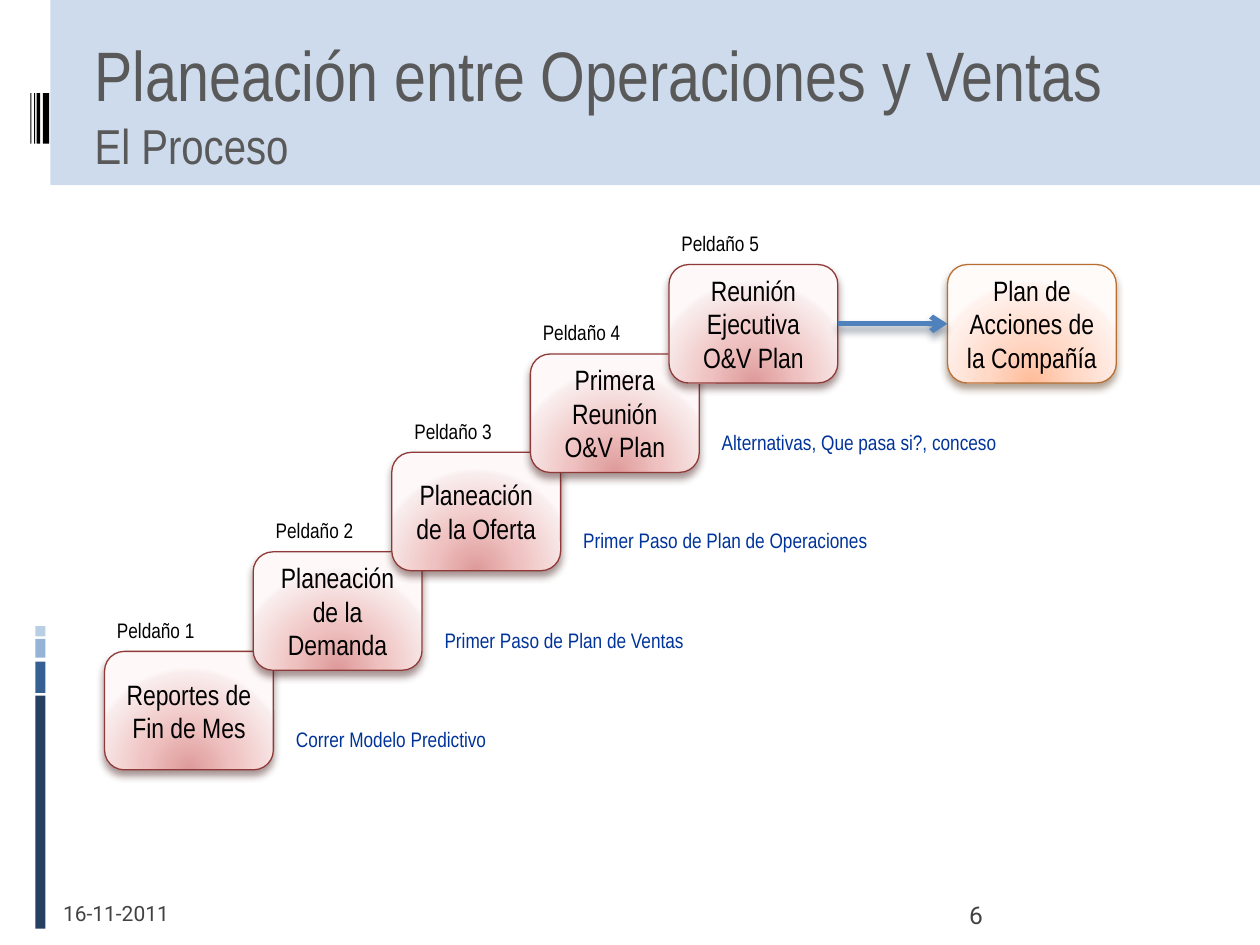
from dataclasses import dataclass
from typing import Optional

from lxml.etree import SubElement
from pptx import Presentation
from pptx.dml.color import RGBColor
from pptx.enum.shapes import MSO_CONNECTOR as Connector, MSO_SHAPE as Shape
from pptx.enum.text import MSO_ANCHOR as Anchor, MSO_AUTO_SIZE as AutoSize, PP_ALIGN as Align
from pptx.oxml import parse_xml
from pptx.oxml.ns import nsdecls, qn
from pptx.util import Inches, Pt

WIDTH, HEIGHT = Inches(10), Inches(7.5)
COLUMN, ROW = WIDTH / 100, HEIGHT / 75
CARD_WIDTH, CARD_HEIGHT = 13.4, 9.4
NARROW, ROBOTO = "Arial Narrow", "Roboto"
INK, BLUE, GREY = "000000", "003399", "424242"


@dataclass(frozen=True)
class Box:
    """A place on the grid, in columns and rows."""
    left: float
    top: float
    width: float
    height: float

    def place(self) -> tuple[int, ...]:
        """Return the place in slide units."""
        return tuple(round(size * unit) for size, unit in zip(
            (self.left, self.top, self.width, self.height), (COLUMN, ROW, COLUMN, ROW)))


@dataclass(frozen=True)
class Theme:
    """The colours of a card."""
    stops: tuple[str, str, str, str]
    line: str
    shadow: str


@dataclass(frozen=True)
class Step:
    """One step of the staircase, with its label and note."""
    left: float
    top: float
    text: str
    label_shift: float = 0
    note: Optional[str] = None
    note_width: float = 0


@dataclass(frozen=True)
class Span:
    """Text in one size."""
    text: str
    size: float


RED = Theme(("DD9A99", "EFC2C1", "F9ECEC", "FEF8F8"), "8F3A38", "441B1A")
ORANGE = Theme(("FFBC99", "FFD8C6", "FFF2ED", "FFFBF9"), "B96F32", "583517")
STEPS = (
    Step(8.3, 51.7, "Reportes de Fin de Mes", 0, "Correr Modelo Predictivo", 17.3),
    Step(20.1, 43.8, "Planeación de la Demanda", 0.8, "Primer Paso de Plan de Ventas", 21.3),
    Step(31.1, 35.9, "Planeación de la Oferta", 0.8, "Primer Paso de Plan de Operaciones", 24.8),
    Step(42.1, 28.1, "Primera Reunión O&V Plan", 0, "Alternativas, Que pasa si?, conceso", 24),
    Step(53.1, 21, "Reunión Ejecutiva O&V Plan"),
)
PANELS = (
    (Box(0, 0, 100, 14.7), "B9CDE5", 70),
    (Box(0, 0, 4, 75), "FFFFFF", 100),
    *((Box(2.8, top, 0.8, height), color, 100) for top, height, color in (
        (55.2, 18.5, "254061"), (52.5, 2.5, "376092"),
        (50.7, 1.5, "95B3D7"), (49.7, 0.8, "B9CDE5"))),
    *((Box(left, 7.4, width, 4), INK, 100) for left, width in (
        (3.4, 0.5), (2.9, 0.3), (2.7, 0.1), (2.4, 0.1))),
)


def paint(target, color: str) -> None:
    """Set a solid colour from a hex string."""
    target.rgb = RGBColor.from_string(color)


def apply(target, formats: dict) -> None:
    """Set attributes from format values."""
    for name, value in formats.items():
        setattr(target, name, value)


def write(frame, spans: tuple[Span, ...], font: str, color: str, align=Align.LEFT) -> None:
    """Write spans on successive lines of one paragraph."""
    para = frame.paragraphs[0]
    para.alignment = align
    for index, item in enumerate(spans):
        if index:
            para.add_line_break()
        span = para.add_run()
        span.text = item.text
        apply(span.font, {"name": font, "size": Pt(item.size)})
        paint(span.font.color, color)


def add_panel(page, box: Box, color: str, opacity: int) -> None:
    """Draw a plain rectangle."""
    panel = page.shapes.add_shape(Shape.RECTANGLE, *box.place())
    panel.shadow.inherit = False
    panel.fill.solid()
    paint(panel.fill.fore_color, color)
    panel.line.fill.background()
    if opacity < 100:
        tone = panel.fill._xPr.find(".//" + qn("a:srgbClr"))
        SubElement(tone, qn("a:alpha"), val=str(opacity * 1000))


def add_shadow(shape, color: str) -> None:
    """Give a shape a soft shadow below it."""
    shape._element.spPr.append(parse_xml(
        f'<a:effectLst {nsdecls("a")}><a:outerShdw blurRad="{Pt(4.5)}" dist="{Pt(3)}" '
        f'dir="5400000" rotWithShape="0"><a:srgbClr val="{color}"><a:alpha val="48000"/>'
        '</a:srgbClr></a:outerShdw></a:effectLst>'))


def add_card(page, left: float, top: float, text: str, theme: Theme):
    """Draw a rounded card with a glow from below."""
    card = page.shapes.add_shape(
        Shape.ROUNDED_RECTANGLE, *Box(left, top, CARD_WIDTH, CARD_HEIGHT).place())
    stops = "".join(f'<a:gs pos="{share * 1000}"><a:srgbClr val="{color}"/></a:gs>'
                    for share, color in zip((0, 43, 93, 100), theme.stops))
    card._element.spPr.insert(2, parse_xml(
        f'<a:gradFill {nsdecls("a")} rotWithShape="1"><a:gsLst>{stops}</a:gsLst>'
        '<a:path path="circle"><a:fillToRect l="50000" t="130000" r="50000" b="-30000"/>'
        '</a:path></a:gradFill>'))
    paint(card.line.color, theme.line)
    card.line.width = Pt(0.75)
    add_shadow(card, theme.shadow)
    apply(card.text_frame, {"word_wrap": True, "vertical_anchor": Anchor.MIDDLE})
    write(card.text_frame, (Span(text, 16),), NARROW, INK, Align.CENTER)
    return card


def add_caption(page, box: Box, text: str, color: str) -> None:
    """Write a small line that does not wrap."""
    frame = page.shapes.add_textbox(*box.place()).text_frame
    apply(frame, {"word_wrap": False, "auto_size": AutoSize.SHAPE_TO_FIT_TEXT})
    write(frame, (Span(text, 12),), NARROW, color)


def add_text(page, box: Box, spans: tuple[Span, ...], font: str, color: str,
             align=Align.LEFT, margin_top: float = 0) -> None:
    """Write text at the bottom of a box without side margins."""
    frame = page.shapes.add_textbox(*box.place()).text_frame
    apply(frame, {"word_wrap": True, "vertical_anchor": Anchor.BOTTOM,
                  "margin_left": 0, "margin_right": 0, "margin_bottom": 0,
                  "margin_top": Inches(margin_top)})
    write(frame, spans, font, color, align)


def add_arrow(page, start, end) -> None:
    """Join the right side of one card to the left side of another."""
    arrow = page.shapes.add_connector(Connector.STRAIGHT, 0, 0, 0, 0)
    arrow.begin_connect(start, 3)
    arrow.end_connect(end, 1)
    paint(arrow.line.color, "4F81BD")
    arrow.line.width = Pt(3)
    SubElement(arrow._element.spPr.find(qn("a:ln")), qn("a:tailEnd"), type="arrow")
    add_shadow(arrow, "1B2D43")


def main() -> None:
    """Build the slide."""
    deck = Presentation()
    apply(deck, {"slide_width": WIDTH, "slide_height": HEIGHT})
    page = deck.slides.add_slide(deck.slide_layouts[6])
    for box, color, opacity in PANELS:
        add_panel(page, box, color, opacity)
    add_text(page, Box(7.5, 1.3, 88.2, 12.5),
             (Span("Planeación entre Operaciones y Ventas", 40), Span("El Proceso", 28)),
             NARROW, "595959", margin_top=0.05)
    add_text(page, Box(5, 69.5, 11.1, 4), (Span("16-11-2011", 12),), ROBOTO, GREY)
    add_text(page, Box(69.7, 69.8, 8.3, 4), (Span("6", 14),), ROBOTO, GREY, Align.RIGHT)
    cards = [add_card(page, step.left, step.top, step.text, RED) for step in STEPS]
    plan = add_card(page, 75.2, 21, "Plan de Acciones de la Compañía", ORANGE)
    add_arrow(page, cards[-1], plan)
    for number, step in enumerate(STEPS, 1):
        if step.note:
            add_caption(page, Box(step.left + 14.2, step.top + 5.5, step.note_width, 3),
                        step.note, BLUE)
        add_caption(page, Box(step.left + step.label_shift, step.top - 3.2, 8.3, 3),
                    f"Peldaño {number}", INK)
    deck.save("out.pptx")


if __name__ == "__main__":
    main()
